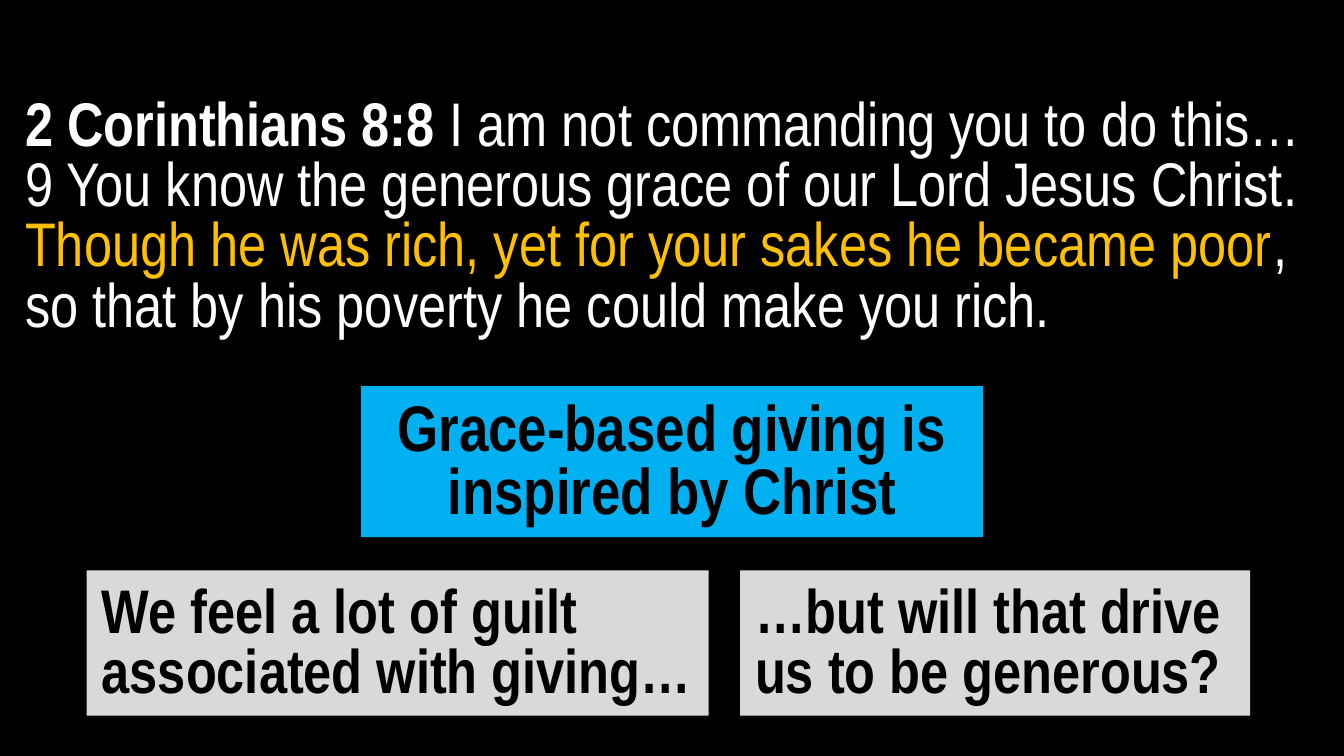
from dataclasses import dataclass

from pptx import Presentation
from pptx.dml.color import RGBColor as RGB
from pptx.enum.shapes import MSO_SHAPE as Shape
from pptx.enum.text import MSO_ANCHOR as Anchor, PP_ALIGN as Align
from pptx.util import Inches, Pt


@dataclass(frozen=True)
class Theme:
    font: str = "Arial Narrow"
    black: str = "000000"
    white: str = "FFFFFF"
    gold: str = "FFC000"
    blue: str = "00B0F0"
    gray: str = "D9D9D9"
    body: int = 44
    head: int = 46


T = Theme()

# Each run: text, colour, bold; a newline starts a new line.
VERSE = [
    ("2 Corinthians 8:8 ", T.white, True),
    ("I am not commanding you to do this…\n"
     "9 You know the generous grace of our Lord Jesus Christ. ", T.white, False),
    ("Though he was rich, yet for your sakes he became poor", T.gold, False),
    (", so that by his poverty he could make you rich.", T.white, False),
]
CLAIM = "Grace-based giving is inspired by Christ"
# Each reply: text, width
REPLIES = [
    ("We feel a lot of guilt associated with giving…", 6.17),
    ("…but will that drive us to be generous?", 5.06),
]

WIDE, HIGH = 13.33, 7.5
CLAIM_W = 6.17
REPLY_X, REPLY_Y, GAP = 0.86, 5.66, 0.31


def write(shape, runs, size=T.body, align=Align.LEFT, after=0,
          inset=(0.15, 0.15, 0.05, 0.05)):
    frame = shape.text_frame
    frame.word_wrap = True
    frame.vertical_anchor = Anchor.TOP
    (frame.margin_left, frame.margin_top,
     frame.margin_right, frame.margin_bottom) = map(Inches, inset)
    para = frame.paragraphs[0]
    para.alignment = align
    para.line_spacing = Pt(size - 1)
    para.space_after = Pt(after)
    for text, color, bold in runs:
        for i, line in enumerate(text.split("\n")):
            if i:
                para.add_line_break()
            run = para.add_run()
            run.text = line
            font = run.font
            font.name, font.size, font.bold = T.font, Pt(size), bold
            font.color.rgb = RGB.from_string(color)


def panel(slide, text, box, fill, **form):
    """Add a filled rectangle with bold black text."""
    rect = slide.shapes.add_shape(Shape.RECTANGLE, *map(Inches, box))
    rect.shadow.inherit = False
    rect.fill.solid()
    rect.fill.fore_color.rgb = RGB.from_string(fill)
    rect.line.fill.background()
    write(rect, [(text, T.black, True)], **form)


def main():
    deck = Presentation()
    deck.slide_width, deck.slide_height = Inches(WIDE), Inches(HIGH)
    slide = deck.slides.add_slide(deck.slide_layouts[6])
    back = slide.background.fill
    back.solid()
    back.fore_color.rgb = RGB.from_string(T.black)

    verse = slide.shapes.add_textbox(*map(Inches, (0.11, 0.93, 12.96, 2.7)))
    write(verse, VERSE, after=12, inset=(0.14, 0.05, 0.1, 0.05))

    panel(slide, CLAIM, ((WIDE - CLAIM_W) / 2, 3.83, CLAIM_W, 1.5), T.blue,
          size=T.head, align=Align.CENTER, after=12,
          inset=(0.05, 0.15, 0.05, 0.05))

    left = REPLY_X
    for text, width in REPLIES:
        panel(slide, text, (left, REPLY_Y, width, 1.44), T.gray)
        left += width + GAP

    deck.save("out.pptx")


if __name__ == "__main__":
    main()
